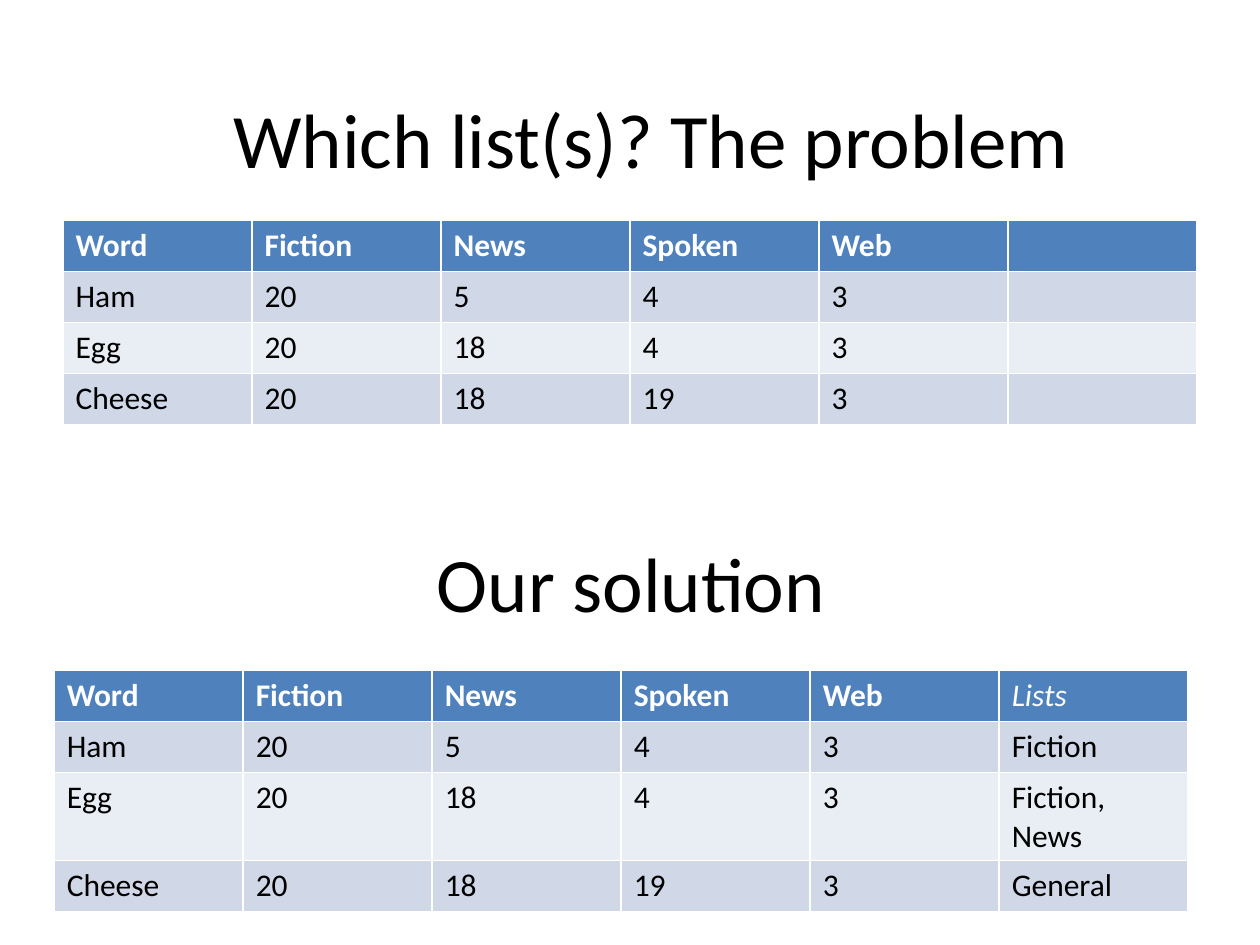
from pptx import Presentation
from pptx.dml.color import RGBColor
from pptx.enum.text import MSO_ANCHOR, PP_ALIGN
from pptx.util import Inches, Pt

FONT = "Calibri"
BLACK = RGBColor(0x00, 0x00, 0x00)
WHITE = RGBColor(0xFF, 0xFF, 0xFF)
HEADER_BLUE = RGBColor(0x4F, 0x81, 0xBD)
BAND_DARK = RGBColor(0xD0, 0xD8, 0xE8)
BAND_LIGHT = RGBColor(0xE9, 0xED, 0xF4)

COUNTS = [
    ["Word", "Fiction", "News", "Spoken", "Web"],
    ["Ham", "20", "5", "4", "3"],
    ["Egg", "20", "18", "4", "3"],
    ["Cheese", "20", "18", "19", "3"],
]

# heading, its left and top, table left and top, last column
SECTIONS = [
    ("Which list(s)? The problem", 0.67, 0.47, 0.5, 1.75, ["", "", "", ""]),
    ("Our solution", 0.51, 3.99, 0.43, 5.32,
     ["Lists", "Fiction", "Fiction, News", "General"]),
]


def format_run(r, size, color):
    r.font.name = FONT
    r.font.size = Pt(size)
    r.font.color.rgb = color


prs = Presentation()
prs.slide_width = Inches(10)
prs.slide_height = Inches(7.5)
s = prs.slides.add_slide(prs.slide_layouts[6])

for heading, left, top, table_left, table_top, lists in SECTIONS:
    tf = s.shapes.add_textbox(Inches(left), Inches(top),
                              Inches(9), Inches(1.25)).text_frame
    tf.word_wrap = True
    tf.vertical_anchor = MSO_ANCHOR.MIDDLE
    p = tf.paragraphs[0]
    p.text = heading
    p.alignment = PP_ALIGN.CENTER
    format_run(p.runs[0], 44, BLACK)

    # The default table style supplies the white cell borders.
    table = s.shapes.add_table(4, 6, Inches(table_left), Inches(table_top),
                               Inches(9), Inches(1.62)).table
    for row, (counts, list_name) in enumerate(zip(COUNTS, lists)):
        is_header = row == 0
        if is_header:
            fill = HEADER_BLUE
        else:
            fill = BAND_DARK if row % 2 else BAND_LIGHT
        for col, text in enumerate(counts + [list_name]):
            cell = table.cell(row, col)
            cell.fill.solid()
            cell.fill.fore_color.rgb = fill
            if not text:
                continue
            cell.text_frame.text = text
            r = cell.text_frame.paragraphs[0].runs[0]
            format_run(r, 18, WHITE if is_header else BLACK)
            r.font.bold = is_header and text != "Lists"
            r.font.italic = text == "Lists"

prs.save("out.pptx")
